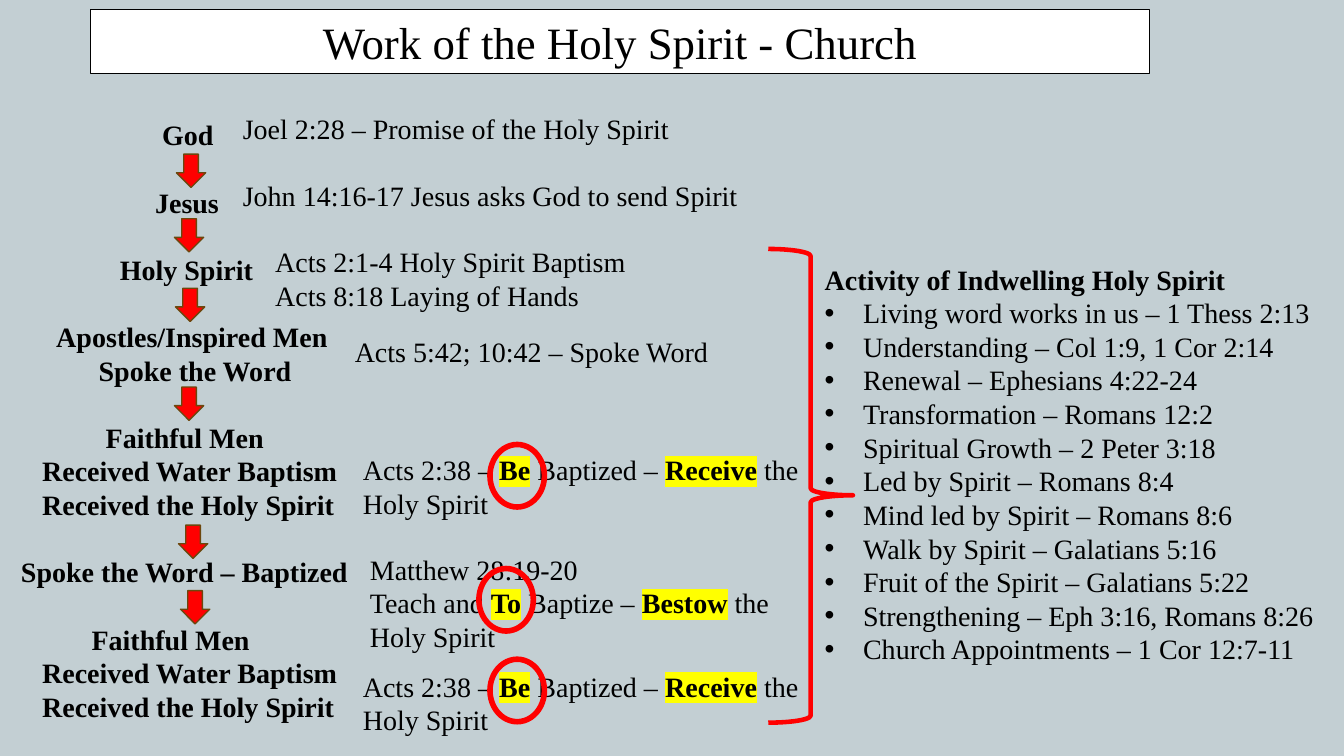
from lxml import etree
from pptx import Presentation
from pptx import util as u
from pptx.dml.color import RGBColor
from pptx.enum import shapes, text
from pptx.oxml.ns import qn

FONT = "Times New Roman"
BACKGROUND = RGBColor(0xC3, 0xCF, 0xD3)
BLACK = RGBColor(0, 0, 0)
WHITE = RGBColor(0xFF, 0xFF, 0xFF)
RED = RGBColor(0xFF, 0, 0)
BROWN = RGBColor(0x6C, 0x47, 0x0D)
YELLOW = RGBColor(0xFF, 0xFF, 0)

BAPTIZED = ["Acts 2:38 – *Be* Baptized – *Receive* the Holy Spirit"]
RECEIVED = [(3, False, "Received Water Baptism"), (3, False, "Received the Holy Spirit")]
CHAIN = [
    (20, False, "God"),
    (19, True, "Jesus"),
    (14, True, "Holy Spirit"),
    (5, True, "Apostles/Inspired Men"),
    (11, False, "Spoke the Word"),
    (12, True, "Faithful Men"),
    *RECEIVED,
    (0, True, "Spoke the Word – Baptized"),
    (10, True, "Faithful Men"),
    *RECEIVED,
]
NOTES = [
    (2.31, 1.06, 4.69, 0.44, ["Joel 2:28 – Promise of the Holy Spirit"]),
    (2.31, 1.72, 5.47, 0.44, ["John 14:16-17 Jesus asks God to send Spirit"]),
    (2.63, 2.38, 3.79, 0.77, ["Acts 2:1-4 Holy Spirit Baptism", "Acts 8:18 Laying of Hands"]),
    (3.42, 3.27, 3.79, 0.44, ["Acts 5:42; 10:42 – Spoke Word"]),
    (3.5, 4.44, 4.82, 0.77, BAPTIZED),
    (3.57, 5.43, 4.37, 1.11,
     ["Matthew 28:19-20", "Teach and *To* Baptize – *Bestow* the Holy Spirit"]),
    (3.5, 6.59, 4.82, 0.77, BAPTIZED),
]
ARROWS = [(1.75, 1.53), (1.73, 2.17), (1.74, 2.86), (1.73, 3.84), (1.77, 5.21), (1.79, 5.86)]
CIRCLES = [(4.86, 4.41), (4.75, 5.64), (4.86, 6.54)]
ACTIVITIES = [
    "Living word works in us – 1 Thess 2:13",
    "Understanding – Col 1:9, 1 Cor 2:14",
    "Renewal – Ephesians 4:22-24",
    "Transformation – Romans 12:2",
    "Spiritual Growth – 2 Peter 3:18",
    "Led by Spirit – Romans 8:4",
    "Mind led by Spirit – Romans 8:6",
    "Walk by Spirit – Galatians 5:16",
    "Fruit of the Spirit – Galatians 5:22",
    "Strengthening – Eph 3:16, Romans 8:26",
    "Church Appointments – 1 Cor 12:7-11",
]


def place(shape, left, top, width, height):
    shape.left, shape.top = u.Inches(left), u.Inches(top)
    shape.width, shape.height = u.Inches(width), u.Inches(height)


def prepare_frame(frame, anchor=text.MSO_ANCHOR.TOP):
    frame.word_wrap = True
    frame.auto_size = text.MSO_AUTO_SIZE.NONE
    frame.vertical_anchor = anchor


def style(para, size=20, bold=False):
    para.font.name = FONT
    para.font.size = u.Pt(size)
    para.font.bold = bold
    para.font.color.rgb = BLACK
    para.space_before = u.Pt(0)


def indent(para, left, first=0):
    properties = para._p.get_or_add_pPr()
    properties.set("marL", str(u.Inches(left)))
    properties.set("indent", str(u.Inches(first)))


def set_bullet(para, character=None):
    bullet = etree.Element(qn("a:buChar" if character else "a:buNone"))
    if character:
        bullet.set("char", character)
    properties = para._p.get_or_add_pPr()
    properties.insert_element_before(bullet, "a:tabLst", "a:defRPr", "a:extLst")


def highlight(span):
    span.font.bold = True
    mark = etree.SubElement(span.font._element, qn("a:highlight"))
    etree.SubElement(mark, qn("a:srgbClr")).set("val", str(YELLOW))


def add_paragraphs(frame, lines):
    for number, line in enumerate(lines):
        para = frame.add_paragraph() if number else frame.paragraphs[0]
        for position, part in enumerate(line.split("*")):
            span = para.add_run()
            span.text = part
            if position % 2:
                highlight(span)
        style(para)
    return frame.paragraphs


def add_text(page, left, top, width, height, lines):
    box = page.shapes.add_textbox(*map(u.Inches, (left, top, width, height)))
    prepare_frame(box.text_frame)
    return add_paragraphs(box.text_frame, lines)


def add_figure(page, kind, left, top, width, height, line, weight, fill=None):
    figure = page.shapes.add_shape(kind, *map(u.Inches, (left, top, width, height)))
    figure.shadow.inherit = False
    if fill is None:
        figure.fill.background()
    else:
        figure.fill.solid()
        figure.fill.fore_color.rgb = fill
    figure.line.color.rgb = line
    figure.line.width = u.Pt(weight)
    return figure


def fill_title(title):
    place(title, 0.9, 0.09, 10.5, 0.64)
    title.fill.solid()
    title.fill.fore_color.rgb = WHITE
    title.line.color.rgb = BLACK
    title.line.width = u.Pt(0.75)
    title.text = "Work of the Holy Spirit - Church"
    prepare_frame(title.text_frame, text.MSO_ANCHOR.MIDDLE)
    para = title.text_frame.paragraphs[0]
    style(para, 32)
    para.alignment = text.PP_ALIGN.CENTER


def fill_activities(body):
    place(body, 8.08, 2.55, 5.14, 4.48)
    prepare_frame(body.text_frame)
    heading, *items = add_paragraphs(
        body.text_frame, ["Activity of Indwelling Holy Spirit", *ACTIVITIES])
    heading.font.bold = True
    indent(heading, 0)
    set_bullet(heading)
    for item in items:
        indent(item, 0.38, -0.38)
        set_bullet(item, "•")


def add_chain(page):
    paras = add_text(page, 0.11, 1.12, 3.6, 6.16, [name for _, _, name in CHAIN])
    for para, (steps, gap, _) in zip(paras, CHAIN):
        para.font.bold = True
        indent(para, 0.07 * steps)
        if gap:
            para.space_before = u.Pt(24)


def main():
    deck = Presentation()
    deck.slide_width, deck.slide_height = u.Inches(13.33), u.Inches(7.5)
    page = deck.slides.add_slide(deck.slide_layouts[1])
    page.background.fill.solid()
    page.background.fill.fore_color.rgb = BACKGROUND

    fill_title(page.shapes.title)
    fill_activities(page.placeholders[1])
    add_chain(page)
    for left, top in ARROWS:
        add_figure(page, shapes.MSO_SHAPE.DOWN_ARROW, left, top, 0.29, 0.33, BROWN, 1, RED)
    for note in NOTES:
        add_text(page, *note)
    brace = add_figure(page, shapes.MSO_SHAPE.RIGHT_BRACE, 7.62, 2.47, 0.84, 4.7, RED, 3.25)
    brace.adjustments[0], brace.adjustments[1] = 0.083, 0.52
    for left, top in CIRCLES:
        add_figure(page, shapes.MSO_SHAPE.OVAL, left, top, 0.54, 0.62, RED, 4)
    deck.save("out.pptx")


if __name__ == "__main__":
    main()
